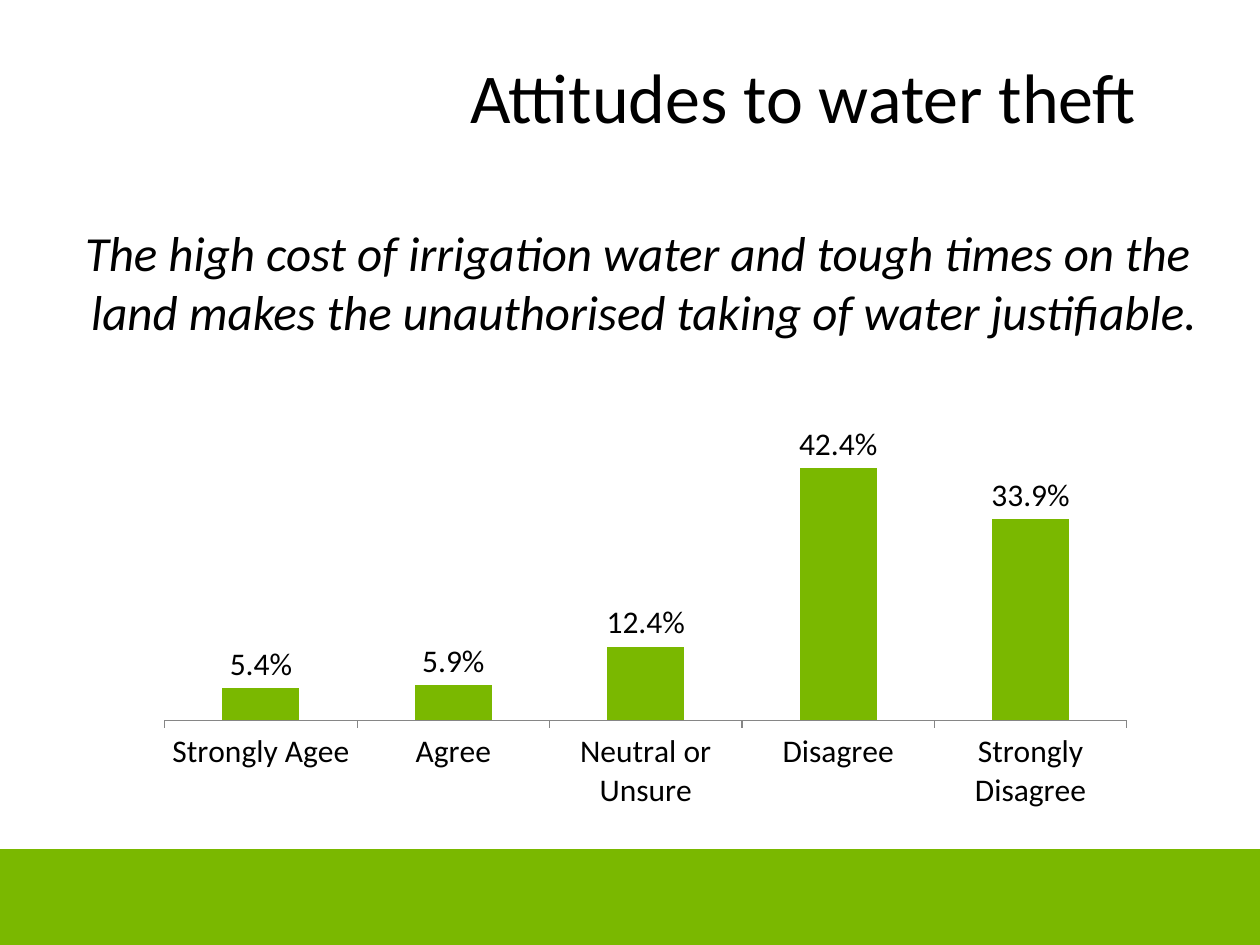
from dataclasses import dataclass

from lxml.etree import SubElement
from pptx import Presentation
from pptx.chart.data import CategoryChartData
from pptx.dml.color import RGBColor
from pptx.enum.chart import XL_CHART_TYPE as ChartType, XL_LABEL_POSITION as LabelPosition
from pptx.enum.chart import XL_TICK_MARK as TickMark
from pptx.enum.shapes import MSO_SHAPE as Shape
from pptx.enum.text import MSO_ANCHOR as Anchor, PP_ALIGN as Align
from pptx.oxml.ns import qn
from pptx.util import Inches, Pt

TITLE = "Attitudes to water theft"
STATEMENT = ("The high cost of irrigation water and tough times on the land "
             "makes the unauthorised taking of water justifiable.")
RESPONSES = {
    "Strongly Agee": 0.054,
    "Agree": 0.059,
    "Neutral or Unsure": 0.124,
    "Disagree": 0.424,
    "Strongly Disagree": 0.339,
}
PERCENT = "0.0%"
PLOT_LAYOUT = {"x": 0.011, "y": 0.07, "w": 0.958, "h": 0.632}


@dataclass(frozen=True)
class Theme:
    font: str = "Calibri"
    green: RGBColor = RGBColor(0x7A, 0xB8, 0x00)
    text: RGBColor = RGBColor(0, 0, 0)
    axis: RGBColor = RGBColor(0x86, 0x86, 0x86)
    title_size: Pt = Pt(40)
    statement_size: Pt = Pt(28)
    chart_size: Pt = Pt(18)


THEME = Theme()


def box(left, top, width, height):
    return [Inches(length) for length in (left, top, width, height)]


def style(font, size, italic=False):
    font.name, font.size, font.italic = THEME.font, size, italic
    font.color.rgb = THEME.text


def add_footer_band(slide):
    band = slide.shapes.add_shape(Shape.RECTANGLE, *box(0, 6.74, 10, 0.76))
    band.shadow.inherit = False
    band.fill.solid()
    band.fill.fore_color.rgb = THEME.green
    band.line.fill.background()


def set_title(slide):
    title = slide.shapes.title
    title.left, title.top, title.width, title.height = box(2.95, 0.13, 6.85, 1.25)
    title.text_frame.text = TITLE
    title.text_frame.vertical_anchor = Anchor.MIDDLE
    paragraph = title.text_frame.paragraphs[0]
    paragraph.alignment = Align.CENTER
    style(paragraph.font, THEME.title_size)


def add_statement(slide):
    frame = slide.shapes.add_textbox(*box(0, 1.72, 9.84, 1.1)).text_frame
    frame.word_wrap = True
    frame.text = STATEMENT
    paragraph = frame.paragraphs[0]
    paragraph.alignment = Align.CENTER
    properties = paragraph._p.get_or_add_pPr()
    properties.set("marL", str(Inches(0.38)))
    properties.set("indent", str(Inches(-0.1)))
    style(paragraph.font, THEME.statement_size, italic=True)


def fix_plot_area(chart):
    """Pin the inner plot area to fractions of the chart frame."""
    plot_area = chart._chartSpace.chart.plotArea
    layout = plot_area.find(qn("c:layout"))
    if layout is None:
        layout = SubElement(plot_area, qn("c:layout"))
        plot_area.insert(0, layout)
    manual = SubElement(layout, qn("c:manualLayout"))
    settings = {"layoutTarget": "inner", "xMode": "edge", "yMode": "edge", **PLOT_LAYOUT}
    for tag, value in settings.items():
        SubElement(manual, qn(f"c:{tag}")).set("val", str(value))


def add_response_chart(slide):
    data = CategoryChartData(number_format=PERCENT)
    data.categories = list(RESPONSES)
    data.add_series("Series 1", list(RESPONSES.values()))
    chart = slide.shapes.add_chart(
        ChartType.COLUMN_CLUSTERED, *box(1.22, 3.36, 7.97, 3.36), data).chart
    chart.has_legend = chart.has_title = False
    style(chart.font, THEME.chart_size)
    fix_plot_area(chart)

    category_axis, value_axis = chart.category_axis, chart.value_axis
    category_axis.major_tick_mark = TickMark.OUTSIDE
    category_axis.format.line.color.rgb = THEME.axis
    value_axis.visible = value_axis.has_major_gridlines = False
    value_axis.minimum_scale, value_axis.maximum_scale = 0, 0.45

    plot = chart.plots[0]
    plot.gap_width = 150
    plot.vary_by_categories = False
    columns = plot.series[0]
    columns.format.fill.solid()
    columns.format.fill.fore_color.rgb = THEME.green
    labels = columns.data_labels
    labels.show_value = True
    labels.number_format, labels.number_format_is_linked = PERCENT, False
    labels.position = LabelPosition.OUTSIDE_END
    style(labels.font, THEME.chart_size)


def main():
    deck = Presentation()
    deck.slide_width, deck.slide_height = Inches(10), Inches(7.5)
    slide = deck.slides.add_slide(deck.slide_layouts[5])
    add_footer_band(slide)
    set_title(slide)
    add_statement(slide)
    add_response_chart(slide)
    deck.save("out.pptx")


if __name__ == "__main__":
    main()
